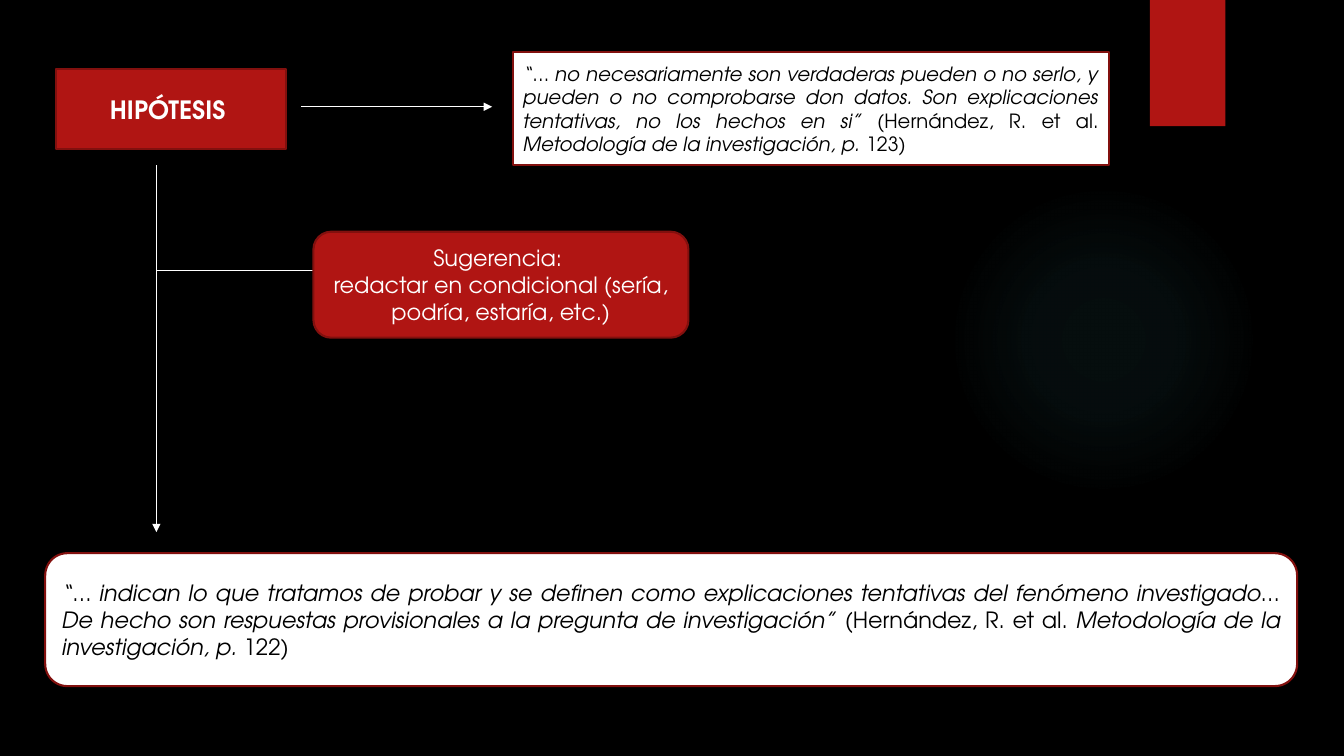
from lxml import etree
from pptx import Presentation
from pptx.dml.color import RGBColor
from pptx.enum.shapes import MSO_CONNECTOR, MSO_SHAPE
from pptx.enum.text import MSO_ANCHOR, PP_ALIGN
from pptx.oxml import parse_xml
from pptx.oxml.ns import nsdecls, qn
from pptx.util import Cm, Pt

FONT = "TeX Gyre Adventor"
BLACK = RGBColor(0x00, 0x00, 0x00)
WHITE = RGBColor(0xFF, 0xFF, 0xFF)
RED = RGBColor(0xB0, 0x15, 0x13)
DARK_RED = RGBColor(0x82, 0x10, 0x0E)
GLOW = RGBColor(0x50, 0xB9, 0xC1)
GLOW_STOPS = [(0, 7), (36, 6), (69, 0)]  # position %, opacity %

# Paragraphs are lists of (text, italic)
TITLE = [[("HIPÓTESIS ", False)]]
SUGGESTION = [
    [("Sugerencia: ", False)],
    [("redactar en condicional (sería, podría, estaría, etc.)", False)],
]
CAVEAT = [[
    ("“… no necesariamente son verdaderas pueden o no serlo, y pueden o no "
     "comprobarse don datos. Son explicaciones tentativas, no los hechos en si”", True),
    (" (Hernández, R. et al. ", False),
    ("Metodología de la investigación, p. ", True),
    ("123)", False),
]]
DEFINITION = [[
    ("“… indican lo que tratamos de probar y se definen como explicaciones "
     "tentativas del fenómeno investigado… De hecho son respuestas "
     "provisionales a la pregunta de investigación” ", True),
    ("(Hernández, R. et al. ", False),
    ("Metodología de la investigación, p. ", True),
    ("122)", False),
]]

RED_STYLE = (RED, WHITE, PP_ALIGN.CENTER)
WHITE_STYLE = (WHITE, BLACK, PP_ALIGN.JUSTIFY)

# preset, (left, top, width, height) in cm, style, size, bold, paragraphs
BOXES = [
    (MSO_SHAPE.RECTANGLE, (1.42, 1.75, 5.79, 2.01), RED_STYLE, 18, True, TITLE),
    (MSO_SHAPE.ROUNDED_RECTANGLE, (1.14, 13.94, 31.55, 3.35), WHITE_STYLE, 16, False, DEFINITION),
    (MSO_SHAPE.ROUNDED_RECTANGLE, (7.9, 5.84, 9.45, 2.67), RED_STYLE, 16, False, SUGGESTION),
    (MSO_SHAPE.RECTANGLE, (12.93, 1.32, 15.01, 2.84), WHITE_STYLE, 14, False, CAVEAT),
]

TRUNK_X = 3.94
BRANCH_Y = 6.81
ARROW_Y = 2.69
# start, end in cm, arrowhead
LINES = [
    ((TRUNK_X, 4.17), (TRUNK_X, 13.41), True),
    ((TRUNK_X, BRANCH_Y), (7.9, BRANCH_Y), False),
    ((7.59, ARROW_Y), (12.4, ARROW_Y), True),
]


def add_plain_shape(slide, preset, place, fill=None):
    shape = slide.shapes.add_shape(preset, *map(Cm, place))
    shape.shadow.inherit = False
    shape.line.fill.background()
    if fill is not None:
        shape.fill.solid()
        shape.fill.fore_color.rgb = fill
    return shape


def add_glow(slide):
    """Add the faint circle of light that fades outwards."""
    glow = add_plain_shape(slide, MSO_SHAPE.OVAL, (23.9, 4.65, 7.82, 7.82))
    stops = "".join(
        f'<a:gs pos="{position * 1000}"><a:srgbClr val="{GLOW}">'
        f'<a:alpha val="{opacity * 1000}"/></a:srgbClr></a:gs>'
        for position, opacity in GLOW_STOPS
    )
    gradient = parse_xml(
        f'<a:gradFill {nsdecls("a")}><a:gsLst>{stops}</a:gsLst><a:path path="circle">'
        '<a:fillToRect l="50000" t="50000" r="50000" b="50000"/></a:path></a:gradFill>'
    )
    glow._element.spPr.find(qn("a:prstGeom")).addnext(gradient)


def add_box(slide, preset, place, style, size, bold, paragraphs):
    fill, ink, alignment = style
    box = add_plain_shape(slide, preset, place, fill)
    box.line.color.rgb = DARK_RED
    box.line.width = Pt(1.5)
    frame = box.text_frame
    frame.word_wrap = True
    frame.vertical_anchor = MSO_ANCHOR.MIDDLE
    for index, pieces in enumerate(paragraphs):
        paragraph = frame.add_paragraph() if index else frame.paragraphs[0]
        paragraph.alignment = alignment
        paragraph.font.name = FONT
        paragraph.font.size = Pt(size)
        paragraph.font.bold = bold
        paragraph.font.color.rgb = ink
        for text, italic in pieces:
            run = paragraph.add_run()
            run.text = text
            run.font.italic = italic


def add_line(slide, start, end, arrowhead):
    line = slide.shapes.add_connector(MSO_CONNECTOR.STRAIGHT, *map(Cm, start + end))
    line.line.color.rgb = WHITE
    line.line.width = Pt(0.75)
    if arrowhead:
        etree.SubElement(line.line._get_or_add_ln(), qn("a:tailEnd"), type="triangle")
    etree.SubElement(line._element.spPr, qn("a:effectLst"))


def main():
    presentation = Presentation()
    presentation.slide_width = Cm(33.87)
    presentation.slide_height = Cm(19.05)
    slide = presentation.slides.add_slide(presentation.slide_layouts[6])
    slide.background.fill.solid()
    slide.background.fill.fore_color.rgb = BLACK

    add_glow(slide)
    add_plain_shape(slide, MSO_SHAPE.RECTANGLE, (28.98, 0, 1.9, 3.18), RED)
    for line in LINES:
        add_line(slide, *line)
    for box in BOXES:
        add_box(slide, *box)

    presentation.save("out.pptx")


if __name__ == "__main__":
    main()
